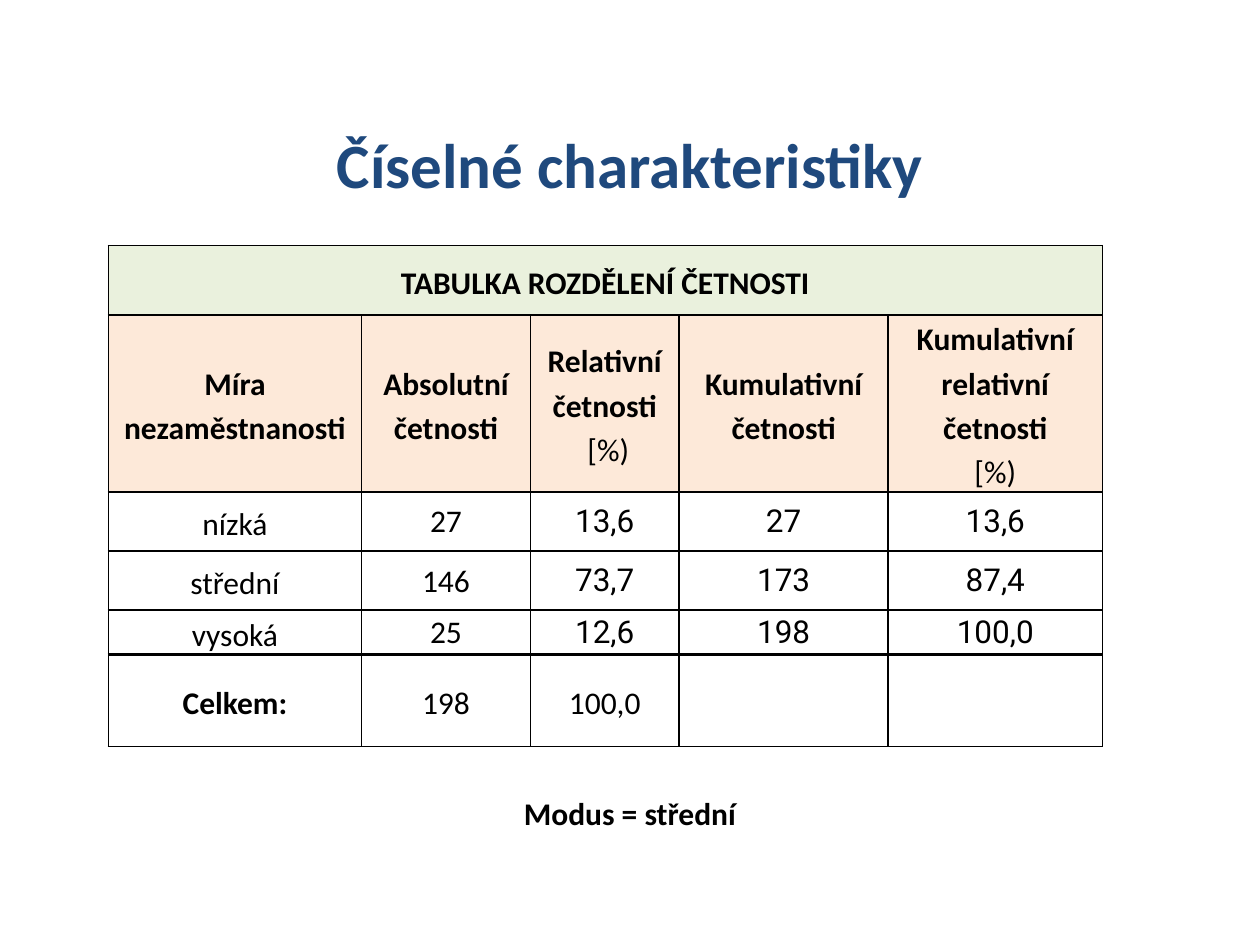
from dataclasses import dataclass

from lxml.etree import SubElement
from pptx import Presentation
from pptx.dml.color import RGBColor
from pptx.enum.text import MSO_ANCHOR, MSO_AUTO_SIZE, PP_ALIGN
from pptx.oxml.ns import qn
from pptx.util import Inches, Pt


@dataclass(frozen=True)
class Theme:
    font: str = "Calibri"
    number_font: str = "Roboto"
    title_size: int = 36
    text_size: int = 18
    title: str = "1F497D"
    text: str = "000000"
    caption_fill: str = "EAF1DD"
    header_fill: str = "FDE9D9"
    line: float = 1
    total_line: float = 2.25


THEME = Theme()
COLS = [2.01, 1.34, 1.18, 1.66, 1.7]
ROWS = [0.55, 1.38, 0.47, 0.47, 0.35, 0.73]

CAPTION = "TABULKA ROZDĚLENÍ ČETNOSTI"
HEADERS = [
    ("Míra nezaměstnanosti",),
    ("Absolutní četnosti",),
    ("Relativní četnosti", " [%)"),
    ("Kumulativní četnosti",),
    ("Kumulativní relativní četnosti", "[%)"),
]
DATA = [
    ("nízká", "27", "13,6", "27", "13,6"),
    ("střední", "146", "73,7", "173", "87,4"),
    ("vysoká", "25", "12,6", "198", "100,0"),
]
TOTAL = ("Celkem:", "198", "100,0", "", "")


def add_run(p, text, size=THEME.text_size, bold=False, color=THEME.text, font=THEME.font):
    r = p.add_run()
    r.text = text
    r.font.size = Pt(size)
    r.font.bold = bold
    r.font.name = font
    r.font.color.rgb = RGBColor.from_string(color)


def set_borders(cell, top, bottom):
    tcPr = cell._tc.get_or_add_tcPr()
    widths = {"L": THEME.line, "R": THEME.line, "T": top, "B": bottom}
    for i, (side, width) in enumerate(widths.items()):
        ln = SubElement(tcPr, qn(f"a:ln{side}"), w=str(Pt(width)))
        fill = SubElement(ln, qn("a:solidFill"))
        SubElement(fill, qn("a:srgbClr"), val=THEME.text)
        tcPr.insert(i, ln)  # borders come before the cell fill


def format_cell(cell, fill=None, tight=False, top=THEME.line, bottom=THEME.line):
    cell.vertical_anchor = MSO_ANCHOR.MIDDLE
    cell.margin_left = cell.margin_right = Inches(0.01 if tight else 0.07)
    cell.margin_top = Inches(0.01 if tight else 0)
    cell.margin_bottom = 0
    if fill:
        cell.fill.solid()
        cell.fill.fore_color.rgb = RGBColor.from_string(fill)
    else:
        cell.fill.background()
    set_borders(cell, top, bottom)


def write_cell(cell, lines, bold=(False,), font=THEME.font, spacing=1.15):
    tf = cell.text_frame
    for i, (text, is_bold) in enumerate(zip(lines, bold)):
        p = tf.paragraphs[0] if i == 0 else tf.add_paragraph()
        p.alignment = PP_ALIGN.CENTER
        p.line_spacing = spacing
        if text:
            add_run(p, text, bold=is_bold, font=font)


def add_title(s, text):
    sp = s.shapes.title
    sp.left, sp.top, sp.width, sp.height = map(Inches, (0.75, 0.67, 8.5, 1.25))
    tf = sp.text_frame
    tf.vertical_anchor = MSO_ANCHOR.MIDDLE
    p = tf.paragraphs[0]
    p.alignment = PP_ALIGN.CENTER
    add_run(p, text, THEME.title_size, True, THEME.title)


def add_frequency_table(s):
    table = s.shapes.add_table(
        len(ROWS), len(COLS), Inches(0.86), Inches(1.95), Inches(sum(COLS)), Inches(sum(ROWS))
    ).table
    table.first_row = table.horz_banding = False
    for col, width in zip(table.columns, COLS):
        col.width = Inches(width)
    for row, height in zip(table.rows, ROWS):
        row.height = Inches(height)

    # Caption across all columns
    for cell in table.rows[0].cells:
        format_cell(cell, THEME.caption_fill)
    table.cell(0, 0).merge(table.cell(0, len(COLS) - 1))
    write_cell(table.cell(0, 0), [CAPTION], [True])

    # Column headers, with the unit in regular weight
    for cell, lines in zip(table.rows[1].cells, HEADERS):
        format_cell(cell, THEME.header_fill)
        write_cell(cell, lines, (True, False))

    # Frequencies, closed by a heavy line above the total
    for i, values in enumerate(DATA, start=2):
        bottom = THEME.total_line if i == len(ROWS) - 2 else THEME.line
        for j, value in enumerate(values):
            cell = table.cell(i, j)
            format_cell(cell, tight=j > 0, bottom=bottom)
            font = THEME.number_font if j > 1 else THEME.font
            write_cell(cell, [value], font=font, spacing=1.0 if j else 1.15)

    # Total
    for j, value in enumerate(TOTAL):
        cell = table.cell(len(ROWS) - 1, j)
        format_cell(cell, top=THEME.total_line)
        write_cell(cell, [value], [j == 0])


def add_note(s, text):
    sp = s.shapes.add_textbox(Inches(3.28), Inches(6.25), Inches(3.44), Inches(0.4))
    tf = sp.text_frame
    tf.word_wrap = True
    tf.auto_size = MSO_AUTO_SIZE.SHAPE_TO_FIT_TEXT
    p = tf.paragraphs[0]
    p.alignment = PP_ALIGN.CENTER
    add_run(p, text, bold=True)


def main():
    prs = Presentation()
    prs.slide_width, prs.slide_height = Inches(10), Inches(7.5)
    s = prs.slides.add_slide(prs.slide_layouts[5])
    add_title(s, "Číselné charakteristiky")
    add_frequency_table(s)
    add_note(s, "Modus = střední")
    prs.save("out.pptx")


if __name__ == "__main__":
    main()
